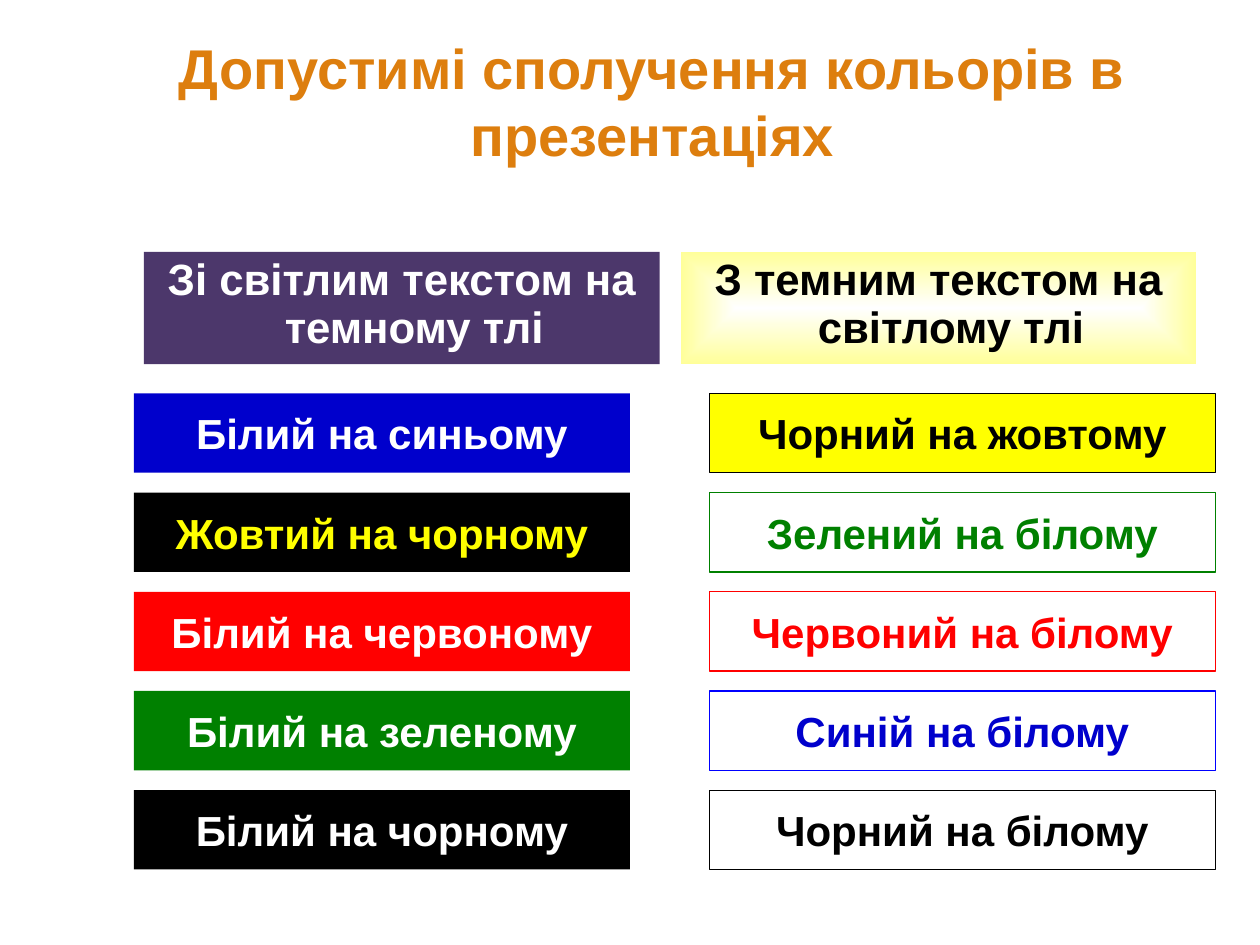
"""Build a slide of permissible text and background colour combinations."""
import lxml.etree
import pptx
import pptx.dml.color
import pptx.enum.shapes
import pptx.enum.text
import pptx.oxml
import pptx.oxml.ns
import pptx.util

Cm = pptx.util.Cm
RGBColor = pptx.dml.color.RGBColor
ANCHOR = pptx.enum.text.MSO_ANCHOR

ORANGE = RGBColor(0xDD, 0x7E, 0x0E)
PURPLE = RGBColor(0x4C, 0x37, 0x6B)
PALE_YELLOW = RGBColor(0xFF, 0xFF, 0x99)
WHITE = RGBColor(0xFF, 0xFF, 0xFF)
BLACK = RGBColor(0x00, 0x00, 0x00)
NAVY = RGBColor(0x00, 0x00, 0xCC)
BLUE = RGBColor(0x00, 0x00, 0xFF)
YELLOW = RGBColor(0xFF, 0xFF, 0x00)
RED = RGBColor(0xFF, 0x00, 0x00)
GREEN = RGBColor(0x00, 0x80, 0x00)

LIGHT_ON_DARK = [
    ("Білий на синьому", WHITE, NAVY),
    ("Жовтий на чорному", YELLOW, BLACK),
    ("Білий на червоному", WHITE, RED),
    ("Білий на зеленому", WHITE, GREEN),
    ("Білий на чорному", WHITE, BLACK),
]
DARK_ON_LIGHT = [
    ("Чорний на жовтому", BLACK, YELLOW, BLACK),
    ("Зелений на білому", GREEN, WHITE, GREEN),
    ("Червоний на білому", RED, None, RED),
    ("Синій на білому", NAVY, None, BLUE),
    ("Чорний на білому", BLACK, None, BLACK),
]
TEXT_SHADOW = (
    f'<a:effectLst {pptx.oxml.ns.nsdecls("a")}>'
    '<a:outerShdw blurRad="38100" dist="38100" dir="2700000" algn="tl">'
    '<a:srgbClr val="000000"><a:alpha val="43000"/></a:srgbClr>'
    '</a:outerShdw></a:effectLst>'
)
CENTRE_PATH = (
    f'<a:path {pptx.oxml.ns.nsdecls("a")} path="shape">'
    '<a:fillToRect l="50000" t="50000" r="50000" b="50000"/></a:path>'
)


def write_text(frame, text, *, size, color, font="Arial", anchor=ANCHOR.MIDDLE,
               wrap=True, spacing=None, hanging=None, shadow=False):
    """Write one bold centred paragraph into a text frame."""
    frame.word_wrap = wrap
    frame.vertical_anchor = anchor
    paragraph = frame.paragraphs[0]
    paragraph.alignment = pptx.enum.text.PP_ALIGN.CENTER
    if spacing:
        paragraph.line_spacing = spacing
    if hanging:
        properties = paragraph._p.get_or_add_pPr()
        properties.set("marL", str(hanging))
        properties.set("indent", str(-hanging))
    run = paragraph.add_run()
    run.text = text
    run.font.size = pptx.util.Pt(size)
    run.font.bold = True
    run.font.color.rgb = color
    if shadow:
        run._r.rPr.append(lxml.etree.fromstring(TEXT_SHADOW))
    run.font.name = font


class ColourSlide:
    """Holds the text sizes and the slide being filled."""

    title_size = 32
    header_size = 25
    swatch_size = 24

    def __init__(self, slide):
        """Keep the slide to draw on."""
        self.slide = slide

    def title(self, text, left, top, width, height):
        """Add the shadowed heading."""
        heading = self.slide.shapes.add_textbox(Cm(left), Cm(top), Cm(width), Cm(height))
        write_text(heading.text_frame, text, size=self.title_size, color=ORANGE, shadow=True)

    def box(self, left, top, width, height, fill=None, line=None):
        """Add a flat rectangle."""
        rectangle = self.slide.shapes.add_shape(
            pptx.enum.shapes.MSO_SHAPE.RECTANGLE, Cm(left), Cm(top), Cm(width), Cm(height))
        rectangle.shadow.inherit = False
        if fill is None:
            rectangle.fill.background()
        else:
            rectangle.fill.solid()
            rectangle.fill.fore_color.rgb = fill
        if line is None:
            rectangle.line.fill.background()
        else:
            rectangle.line.color.rgb = line
            rectangle.line.width = pptx.util.Pt(0.75)
        return rectangle

    def header(self, text, left, color, fill):
        """Add a column header."""
        banner = self.box(left, 5.08, 10.4, 2.26, fill)
        write_text(banner.text_frame, text, size=self.header_size, color=color,
                   anchor=ANCHOR.TOP, spacing=0.9, hanging=Cm(0.5))
        return banner

    def glow(self, banner, centre, edge):
        """Fill a banner with a gradient from its centre to its edge."""
        banner.fill.gradient()
        for stop, position, color in zip(banner.fill.gradient_stops, (0, 1), (centre, edge)):
            stop.position = position
            stop.color.rgb = color
        gradient = banner._element.spPr.find(pptx.oxml.ns.qn("a:gradFill"))
        direction = gradient.find(pptx.oxml.ns.qn("a:lin"))
        gradient.replace(direction, lxml.etree.fromstring(CENTRE_PATH))

    def swatches(self, samples, left, width):
        """Stack a column of colour samples at an equal pitch."""
        for row, (text, color, *look) in enumerate(samples):
            swatch = self.box(left, 7.93 + 2 * row, width, 1.6, *look)
            write_text(swatch.text_frame, text, size=self.swatch_size, color=color, wrap=False)


def main():
    """Assemble and save the slide."""
    deck = pptx.Presentation()
    deck.slide_width, deck.slide_height = Cm(25.4), Cm(19.05)
    page = ColourSlide(deck.slides.add_slide(deck.slide_layouts[6]))
    page.title("Допустимі сполучення кольорів в презентаціях", 1.4, 0.8, 23.5, 2.46)
    page.header("Зі світлим текстом на темному тлі", 2.9, WHITE, PURPLE)
    dark_text = page.header("З темним текстом на світлому тлі", 13.72, BLACK, PALE_YELLOW)
    page.glow(dark_text, WHITE, PALE_YELLOW)
    page.swatches(LIGHT_ON_DARK, 2.7, 10)
    page.swatches(DARK_ON_LIGHT, 14.3, 10.2)
    deck.save("out.pptx")


if __name__ == "__main__":
    main()
